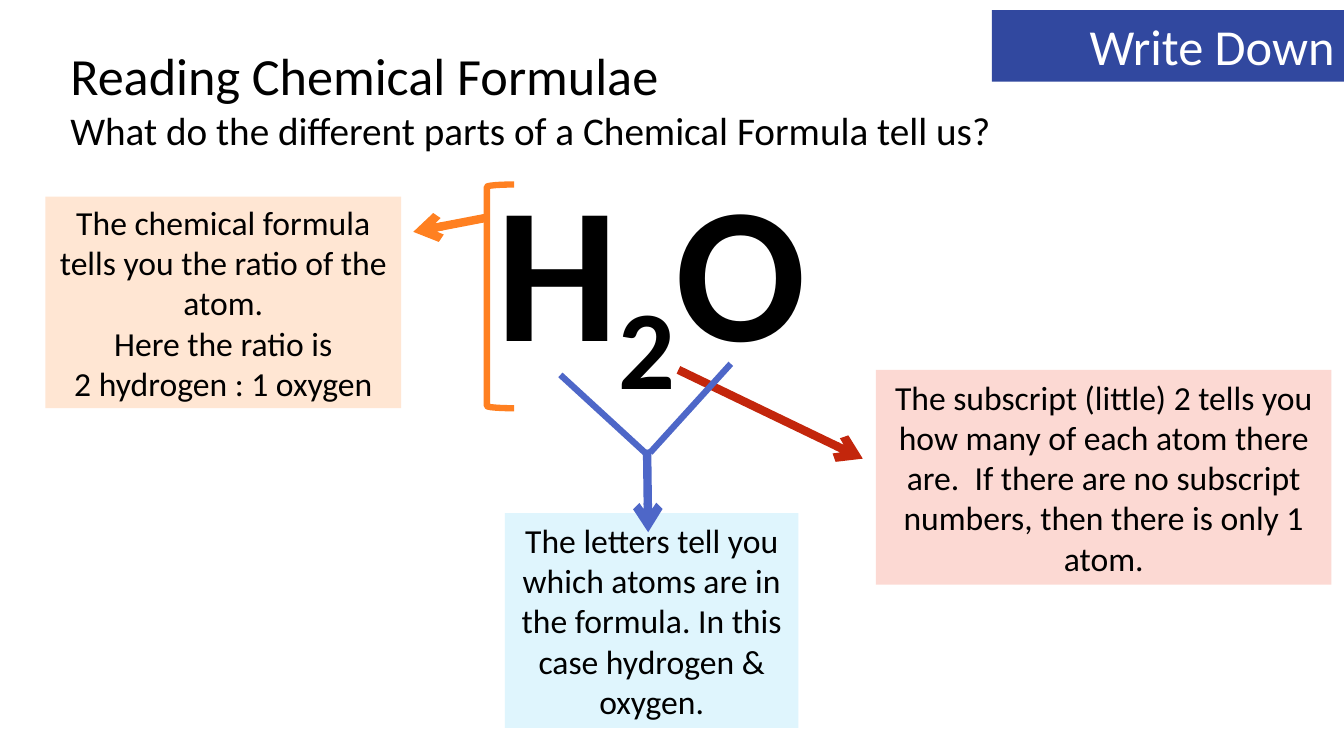
from pptx import Presentation
from pptx.dml.color import RGBColor
from pptx.enum.shapes import MSO_CONNECTOR, MSO_SHAPE
from pptx.enum.text import MSO_ANCHOR, PP_ALIGN
from pptx.oxml.ns import qn
from pptx.util import Pt
from lxml import etree

STRAIGHT = MSO_CONNECTOR.STRAIGHT
RECTANGLE, LEFT_BRACKET = MSO_SHAPE.RECTANGLE, MSO_SHAPE.LEFT_BRACKET
TOP, MIDDLE = MSO_ANCHOR.TOP, MSO_ANCHOR.MIDDLE
LEFT, CENTER, RIGHT = PP_ALIGN.LEFT, PP_ALIGN.CENTER, PP_ALIGN.RIGHT

FONT = "Calibri"
BLACK = RGBColor(0x00, 0x00, 0x00)
WHITE = RGBColor(0xFF, 0xFF, 0xFF)
NAVY = RGBColor(0x31, 0x48, 0x9F)
BLUE = RGBColor(0x4E, 0x67, 0xC8)
RED = RGBColor(0xC3, 0x26, 0x0C)
ORANGE = RGBColor(0xFF, 0x80, 0x21)
PALE_BLUE = RGBColor(0xDF, 0xF5, 0xFD)
PALE_RED = RGBColor(0xFC, 0xD9, 0xD3)
PALE_ORANGE = RGBColor(0xFF, 0xE6, 0xD3)


def style(paragraph, size, align, color=BLACK):
    paragraph.alignment = align
    paragraph.font.name = FONT
    paragraph.font.size = Pt(size)
    paragraph.font.color.rgb = color


def write(shape, lines, align, anchor, color=BLACK):
    frame = shape.text_frame
    frame.word_wrap = True
    frame.vertical_anchor = anchor
    for index, (text, size) in enumerate(lines):
        paragraph = frame.paragraphs[0] if index == 0 else frame.add_paragraph()
        paragraph.text = text
        style(paragraph, size, align, color)


def add_heading(slide, bounds, lines):
    heading = slide.shapes.add_textbox(*map(Pt, bounds))
    write(heading, lines, LEFT, TOP)


def add_panel(slide, bounds, fill, lines, align=CENTER, anchor=MIDDLE, color=BLACK):
    panel = slide.shapes.add_shape(RECTANGLE, *map(Pt, bounds))
    panel.shadow.inherit = False
    panel.fill.solid()
    panel.fill.fore_color.rgb = fill
    panel.line.fill.background()
    write(panel, lines, align, anchor, color)


def add_note(slide, bounds, fill, *lines):
    add_panel(slide, bounds, fill, [(line, 24) for line in lines])


def add_formula(slide, bounds, parts):
    frame = slide.shapes.add_textbox(*map(Pt, bounds)).text_frame
    frame.word_wrap = True
    frame.vertical_anchor = MIDDLE
    formula = frame.paragraphs[0]
    style(formula, 138, CENTER)
    formula.font.bold = True
    for text, baseline in parts:
        symbol = formula.add_run()
        symbol.text = text
        if baseline:
            symbol._r.get_or_add_rPr().set("baseline", str(baseline * 1000))


def add_line(slide, start, end, color, width, arrow=False):
    connector = slide.shapes.add_connector(STRAIGHT, *map(Pt, start + end))
    connector.line.color.rgb = color
    connector.line.width = Pt(width)
    properties = connector._element.spPr
    if arrow:
        etree.SubElement(properties.find(qn("a:ln")), qn("a:tailEnd"), type="arrow")
    etree.SubElement(properties, qn("a:effectLst"))


def add_bracket(slide, bounds, color, width):
    bracket = slide.shapes.add_shape(LEFT_BRACKET, *map(Pt, bounds))
    bracket.shadow.inherit = False
    bracket.fill.background()
    bracket.line.color.rgb = color
    bracket.line.width = Pt(width)


def main():
    deck = Presentation()
    deck.slide_width, deck.slide_height = Pt(960), Pt(540)
    slide = deck.slides.add_slide(deck.slide_layouts[6])

    add_heading(slide, (43.2, 27.4, 844.6, 86.4), [
        ("Reading Chemical Formulae", 37.3),
        ("What do the different parts of a Chemical Formula tell us?", 28),
    ])
    add_formula(slide, (337.7, 131.8, 254.9, 136.1), [("H", 0), ("2", -25), ("O", 0)])

    add_note(slide, (360.7, 366.5, 209.5, 153.4), PALE_BLUE,
             "The letters tell you which atoms are in the formula. "
             "In this case hydrogen & oxygen.")
    add_line(slide, (484.6, 264.2), (616.3, 327.6), RED, 6, arrow=True)
    add_note(slide, (625.7, 264.2, 325.4, 153.4), PALE_RED,
             "The subscript (little) 2 tells you how many of each atom there are.  "
             "If there are no subscript numbers, then there is only 1 atom.")
    add_note(slide, (32.4, 140.4, 254.2, 151.2), PALE_ORANGE,
             "The chemical formula tells you the ratio of the atom.",
             "Here the ratio is",
             "2 hydrogen : 1 oxygen")
    add_panel(slide, (708.5, 7.2, 252, 51.1), NAVY, [("Write Down", 36)], RIGHT, TOP, WHITE)

    add_line(slide, (462.2, 321.1), (463, 380.2), BLUE, 6, arrow=True)
    add_line(slide, (400.3, 267.8), (461.5, 324), BLUE, 4.5)
    add_line(slide, (522, 259.9), (464.4, 323.3), BLUE, 4.5)
    add_bracket(slide, (347.8, 131.8, 19.4, 159.8), ORANGE, 4.5)
    add_line(slide, (347.8, 155.5), (295.2, 165.6), ORANGE, 6, arrow=True)

    deck.save("out.pptx")


if __name__ == "__main__":
    main()
